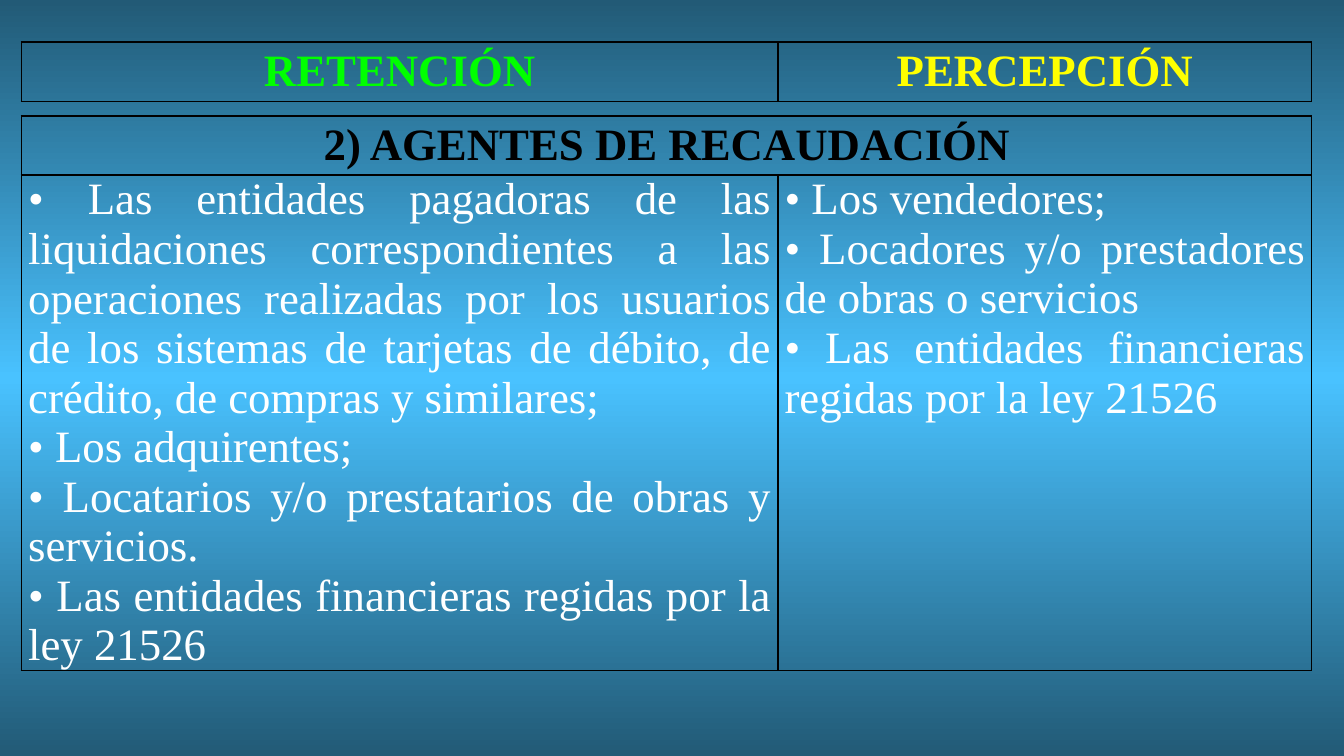
from copy import deepcopy

from pptx import Presentation
from pptx.dml.color import RGBColor
from pptx.enum.text import MSO_ANCHOR as Anchor, PP_ALIGN as Align
from pptx.oxml import parse_xml
from pptx.oxml.ns import nsdecls, qn
from pptx.util import Pt

FONT = "Times New Roman"
BLACK, WHITE, GREEN, YELLOW = "000000", "FFFFFF", "00FF00", "FFFF00"
LEFT = 11.5
COLUMNS = (405.2, 286)

WITHHOLDING_AGENTS = [
    "• Las entidades pagadoras de las liquidaciones correspondientes a las "
    "operaciones realizadas por los usuarios de los sistemas de tarjetas de "
    "débito, de crédito, de compras y similares;",
    "• Los adquirentes;",
    "• Locatarios y/o prestatarios de obras y servicios.",
    "• Las entidades financieras regidas por la ley 21526",
]
COLLECTION_AGENTS = [
    "• Los vendedores;",
    "• Locadores y/o prestadores de obras o servicios",
    "• Las entidades financieras regidas por la ley 21526",
]


def rgb(value):
    return RGBColor.from_string(value)


def set_background(s, stops):
    fill = s.background.fill
    fill.gradient()
    fill.gradient_angle = 90
    gs_list = s.element.find(".//" + qn("a:gsLst"))
    while len(gs_list) < len(stops):
        gs_list.append(deepcopy(gs_list[0]))
    for stop, (position, color) in zip(fill.gradient_stops, stops):
        stop.position = position
        stop.color.rgb = rgb(color)


def set_borders(cell):
    """Draw a thin black line on all four sides of a cell."""
    tc_pr = cell._tc.get_or_add_tcPr()
    for i, side in enumerate("LRTB"):
        tc_pr.insert(i, parse_xml(
            f'<a:ln{side} {nsdecls("a")} w="{Pt(1)}"><a:solidFill>'
            f'<a:srgbClr val="{BLACK}"/></a:solidFill></a:ln{side}>'))


def add_grid(s, top, heights):
    """Add a two-column table with plain, unfilled cells."""
    table = s.shapes.add_table(len(heights), len(COLUMNS), Pt(LEFT), Pt(top),
                               Pt(sum(COLUMNS)), Pt(sum(heights))).table
    table.first_row = table.horz_banding = False
    for column, width in zip(table.columns, COLUMNS):
        column.width = Pt(width)
    for row, height in zip(table.rows, heights):
        row.height = Pt(height)
    for cell in table.iter_cells():
        cell.fill.background()
        set_borders(cell)
    return table


def write_cell(cell, lines, color, bold, align, margins):
    cell.margin_left = cell.margin_right = Pt(margins[0])
    cell.margin_top = cell.margin_bottom = Pt(margins[1])
    tf = cell.text_frame
    tf.text = "\n".join(lines)
    for p in tf.paragraphs:
        p.alignment = align
        p.font.name = FONT
        p.font.size = Pt(24)
        p.font.bold = bold
        p.font.color.rgb = rgb(color)


def write_heading(cell, text, color):
    write_cell(cell, [text], color, True, Align.CENTER, (7.2, 2.6))


def write_list(cell, lines):
    write_cell(cell, lines, WHITE, False, Align.JUSTIFY, (3.6, 0))


def main():
    prs = Presentation()
    prs.slide_width, prs.slide_height = Pt(720), Pt(405)
    s = prs.slides.add_slide(prs.slide_layouts[6])
    set_background(s, [(0, "225A76"), (0.5, "49C2FF"), (1, "225A76")])

    # Column headings
    headings = add_grid(s, 22.5, [31.8])
    write_heading(headings.cell(0, 0), "RETENCIÓN", GREEN)
    write_heading(headings.cell(0, 1), "PERCEPCIÓN", YELLOW)

    # Collection agents under one merged heading
    agents = add_grid(s, 62, [31.8, 265])
    agents.cell(0, 0).merge(agents.cell(0, 1))
    write_heading(agents.cell(0, 0), "2) AGENTES DE RECAUDACIÓN", BLACK)
    write_list(agents.cell(1, 0), WITHHOLDING_AGENTS)
    write_list(agents.cell(1, 1), COLLECTION_AGENTS)
    agents.cell(1, 0).vertical_anchor = Anchor.MIDDLE

    prs.save("out.pptx")


if __name__ == "__main__":
    main()
